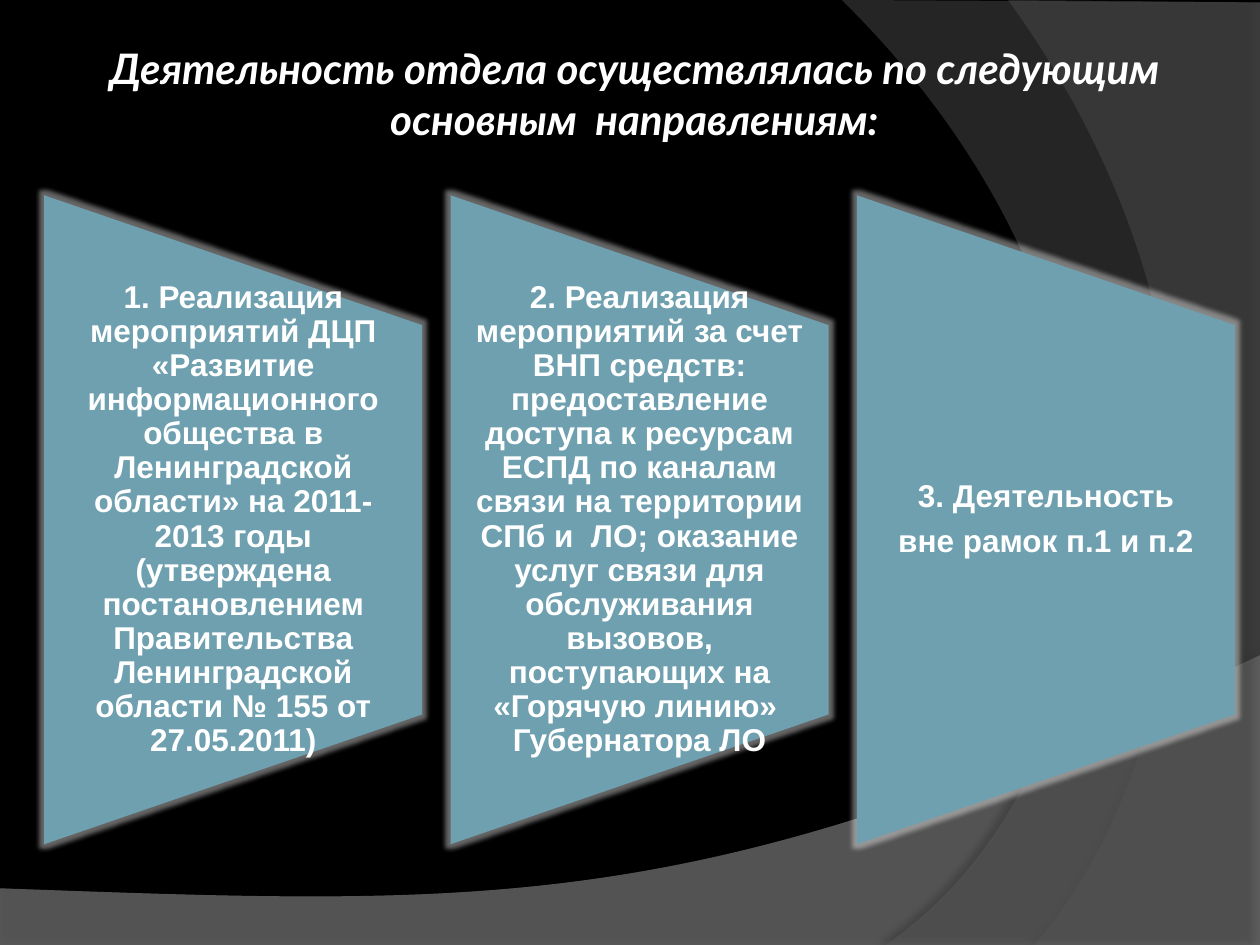
"""Build a slide with the three main directions of the department's work."""
from lxml.etree import SubElement
from pptx import Presentation
from pptx.dml.color import RGBColor
from pptx.enum.shapes import MSO_SHAPE as Shape
from pptx.enum.text import MSO_ANCHOR as Anchor, PP_ALIGN as Align
from pptx.oxml.ns import qn
from pptx.util import Pt

COLORS = {"background": "000000", "wave": "7F7F7F", "ring": "5E5E5E",
          "panel": "6EA0B0", "text": "FFFFFF", "shadow": "000000", "glow": "FFFFFF"}
TITLE = ["Деятельность отдела осуществлялась по следующим",
         "основным  направлениям:"]
DIRECTIONS = [
    ["1. Реализация мероприятий ДЦП «Развитие информационного общества в "
     "Ленинградской области» на 2011-2013 годы (утверждена постановлением "
     "Правительства Ленинградской области № 155 от 27.05.2011)"],
    ["2. Реализация мероприятий за счет ВНП средств: предоставление доступа к "
     "ресурсам ЕСПД по каналам связи на территории СПб и  ЛО; оказание услуг "
     "связи для обслуживания вызовов, поступающих на «Горячую линию»  Губернатора ЛО"],
    ["3. Деятельность", "вне рамок п.1 и п.2"],
]
WIDTH, HEIGHT = 720, 540
WAVE = {"color": "wave", "alpha": 45, "shadow": (35, 4, 3.5, 270),
        "corners": [(0, 540.7), (WIDTH, 540.7)],
        "curve": [(720, 374.4), (402.5, 524.9), (281.5, 517.7), (0, 507.6)]}
RING = {"color": "ring", "alpha": 40, "shadow": (45, 4, 4, 180),
        "corners": [(WIDTH, 1.4), (WIDTH, HEIGHT)]}
OUTER_RING = RING | {"curve": [(591.1, 540), (673.2, 445.7), (733, 216), (576, 0)]}
INNER_RING = RING | {"curve": [(506.2, 540), (641.5, 445.7), (681.8, 198), (481, 0)]}
BACKDROP = [WAVE, OUTER_RING, WAVE, INNER_RING]
PANEL_LENGTH, PANEL_WIDTH, PANEL_LEFT, PANEL_PITCH, PANEL_MIDDLE = 370.8, 216, 25.3, 232.2, 297
LABEL_HEIGHT = 222.5


def add_alpha(color, percent):
    SubElement(color, qn("a:alpha"), val=str(percent * 1000))


def add_effect(shape, kind, color, alpha, **attributes):
    shape.shadow.inherit = False
    effects = shape._element.spPr.find(qn("a:effectLst"))
    effect = SubElement(effects, qn(f"a:{kind}"), **attributes)
    add_alpha(SubElement(effect, qn("a:srgbClr"), val=COLORS[color]), alpha)


def fill_shape(shape, color):
    shape.fill.solid()
    shape.fill.fore_color.rgb = RGBColor.from_string(COLORS[color])
    shape.line.fill.background()


def bend_last_line(shape, controls):
    line = shape._element.spPr.findall(f".//{qn('a:lnTo')}")[-1]
    line.tag = qn("a:cubicBezTo")
    for index, (x, y) in enumerate(controls):
        point = line.makeelement(qn("a:pt"), {"x": str(Pt(x) - shape.left),
                                              "y": str(Pt(y) - shape.top)})
        line.insert(index, point)


def add_backdrop(slide, color, alpha, shadow, corners, curve):
    begin, *controls, end = curve
    first, *rest = [(Pt(x), Pt(y)) for x, y in corners + [begin, end]]
    builder = slide.shapes.build_freeform(*first)
    builder.add_line_segments(rest, close=False)
    shape = builder.convert_to_shape()
    bend_last_line(shape, controls)
    SubElement(shape._element.spPr.find(f".//{qn('a:path')}"), qn("a:close"))
    fill_shape(shape, color)
    add_alpha(shape._element.spPr.find(f".//{qn('a:srgbClr')}"), alpha)
    opacity, blur, distance, angle = shadow
    add_effect(shape, "outerShdw", "shadow", opacity, blurRad=str(Pt(blur)),
               dist=str(Pt(distance)), dir=str(angle * 60000))


def add_text(slide, box, lines, font_name, size, italic=False):
    frame = slide.shapes.add_textbox(*map(Pt, box)).text_frame
    frame.word_wrap = True
    frame.text = "\n".join(lines)
    for paragraph in frame.paragraphs:
        paragraph.alignment = Align.CENTER
        for run in paragraph.runs:
            font = run.font
            font.name, font.size, font.bold, font.italic = font_name, Pt(size), True, italic
            font.color.rgb = RGBColor.from_string(COLORS["text"])
    return frame


def add_direction(slide, index, lines):
    left = PANEL_LEFT + index * PANEL_PITCH
    panel = slide.shapes.add_shape(
        Shape.FLOWCHART_MANUAL_OPERATION,
        Pt(left + (PANEL_WIDTH - PANEL_LENGTH) / 2), Pt(PANEL_MIDDLE - PANEL_WIDTH / 2),
        Pt(PANEL_LENGTH), Pt(PANEL_WIDTH))
    panel.rotation = 270
    fill_shape(panel, "panel")
    add_effect(panel, "glow", "glow", 40, rad=str(Pt(5)))
    box = (left, PANEL_MIDDLE - LABEL_HEIGHT / 2, PANEL_WIDTH, LABEL_HEIGHT)
    frame = add_text(slide, box, lines, "Arial", 18)
    frame.vertical_anchor = Anchor.MIDDLE
    frame.margin_left = frame.margin_right = Pt(8.64)
    frame.margin_top = frame.margin_bottom = 0
    for paragraph in frame.paragraphs:
        paragraph.line_spacing = 0.9
        paragraph.space_after = Pt(6.3)


def main():
    presentation = Presentation()
    presentation.slide_width, presentation.slide_height = Pt(WIDTH), Pt(HEIGHT)
    slide = presentation.slides.add_slide(presentation.slide_layouts[6])
    background = slide.background.fill
    background.solid()
    background.fore_color.rgb = RGBColor.from_string(COLORS["background"])
    for part in BACKDROP:
        add_backdrop(slide, **part)
    add_text(slide, (22.3, 20.9, 680.4, 65.5), TITLE, "Lato", 24, italic=True)
    for index, lines in enumerate(DIRECTIONS):
        add_direction(slide, index, lines)
    presentation.save("out.pptx")


if __name__ == "__main__":
    main()
